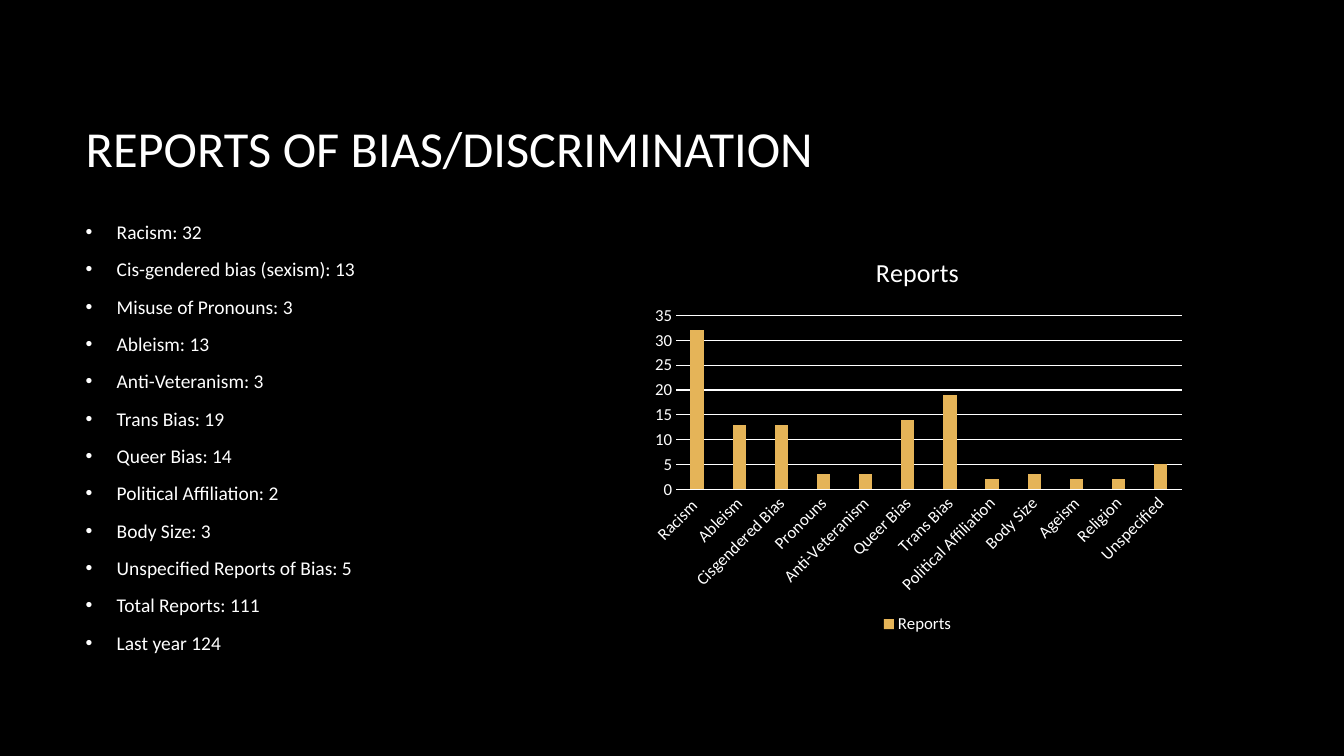
from dataclasses import dataclass

from lxml import etree
from pptx import Presentation
from pptx.chart.data import CategoryChartData
from pptx.dml.color import RGBColor
from pptx.enum.chart import XL_CHART_TYPE, XL_LEGEND_POSITION, XL_TICK_MARK
from pptx.enum.text import MSO_ANCHOR, MSO_AUTO_SIZE, PP_ALIGN
from pptx.oxml.ns import qn
from pptx.util import Inches, Pt

COLUMN = XL_CHART_TYPE.COLUMN_CLUSTERED
BOTTOM = XL_LEGEND_POSITION.BOTTOM
NO_TICK = XL_TICK_MARK.NONE
MIDDLE = MSO_ANCHOR.MIDDLE
NO_FIT = MSO_AUTO_SIZE.NONE
LEFT = PP_ALIGN.LEFT


@dataclass(frozen=True)
class Theme:
    face: str = "Calibri"
    back: RGBColor = RGBColor(0, 0, 0)
    ink: RGBColor = RGBColor(255, 255, 255)
    gold: RGBColor = RGBColor(0xE5, 0xB4, 0x58)
    title: float = 36
    body: float = 13.9
    head: float = 18.6
    label: float = 12
    base: float = 10
    rule: float = 0.75


class Page:
    def __init__(self, slide, theme):
        self.slide = slide
        self.theme = theme
        fill = slide.background.fill
        fill.solid()
        fill.fore_color.rgb = theme.back

    def style(self, font, size):
        font.name = self.theme.face
        font.size = Pt(size)
        font.bold = False
        font.color.rgb = self.theme.ink

    def rule(self, line):
        line.color.rgb = self.theme.ink
        line.width = Pt(self.theme.rule)

    def place(self, shape, box):
        shape.left, shape.top, shape.width, shape.height = map(Inches, box)

    def frame(self, shape):
        frame = shape.text_frame
        frame.word_wrap = True
        frame.auto_size = NO_FIT
        frame.vertical_anchor = MIDDLE
        return frame

    def title(self, text, box):
        shape = self.slide.shapes.title
        self.place(shape, box)
        frame = self.frame(shape)
        frame.text = text
        para = frame.paragraphs[0]
        para.alignment = LEFT
        self.style(para.font, self.theme.title)

    def bullets(self, items, box):
        shape = self.slide.shapes.add_textbox(*map(Inches, box))
        frame = self.frame(shape)
        frame.text = "\n".join(items)
        for para in frame.paragraphs:
            para.space_after = Pt(10)
            props = para._p.get_or_add_pPr()
            props.set("marL", str(Inches(0.31)))
            props.set("indent", str(Inches(-0.31)))
            font = etree.SubElement(props, qn("a:buFont"))
            font.set("typeface", "Arial")
            mark = etree.SubElement(props, qn("a:buChar"))
            mark.set("char", "•")
            self.style(para.font, self.theme.body)

    def axis(self, axis):
        axis.major_tick_mark = NO_TICK
        axis.minor_tick_mark = NO_TICK
        self.style(axis.tick_labels.font, self.theme.label)

    def columns(self, name, counts, box):
        data = CategoryChartData()
        data.categories = list(counts)
        data.add_series(name, list(counts.values()))
        holder = self.slide.shapes.add_chart(COLUMN, *map(Inches, box), data)
        chart = holder.chart
        self.style(chart.font, self.theme.base)

        chart.has_title = True
        head = chart.chart_title.text_frame
        head.text = name
        self.style(head.paragraphs[0].font, self.theme.head)

        chart.has_legend = True
        chart.legend.position = BOTTOM
        chart.legend.include_in_layout = False
        self.style(chart.legend.font, self.theme.label)

        names, values = chart.category_axis, chart.value_axis
        self.axis(names)
        self.axis(values)
        self.rule(names.format.line)
        names._element.txPr.find(qn("a:bodyPr")).set("rot", "-2700000")
        values.format.line.fill.background()
        values.has_major_gridlines = True
        self.rule(values.major_gridlines.format.line)

        plot = chart.plots[0]
        plot.vary_by_categories = False
        plot.gap_width = 219
        plot.overlap = -27
        fill = plot.series[0].format.fill
        fill.solid()
        fill.fore_color.rgb = self.theme.gold


def main():
    deck = Presentation()
    deck.slide_width, deck.slide_height = Inches(13.33), Inches(7.5)
    page = Page(deck.slides.add_slide(deck.slide_layouts[5]), Theme())
    page.title("REPORTS OF BIAS/DISCRIMINATION", (0.75, 0.67, 11.08, 1.59))
    page.bullets([
        "Racism: 32",
        "Cis-gendered bias (sexism): 13",
        "Misuse of Pronouns: 3",
        "Ableism: 13",
        "Anti-Veteranism: 3",
        "Trans Bias: 19",
        "Queer Bias: 14",
        "Political Affiliation: 2",
        "Body Size: 3",
        "Unspecified Reports of Bias: 5",
        "Total Reports: 111",
        "Last year 124",
    ], (0.75, 2.34, 5.46, 3.99))
    page.columns("Reports", {
        "Racism ": 32,
        "Ableism": 13,
        "Cisgendered Bias": 13,
        "Pronouns": 3,
        "Anti-Veteranism": 3,
        "Queer Bias": 14,
        "Trans Bias": 19,
        "Political Affiliation": 2,
        "Body Size": 3,
        "Ageism": 2,
        "Religion": 2,
        "Unspecified": 5,
    }, (6.37, 2.34, 5.46, 3.99))
    deck.save("out.pptx")


if __name__ == "__main__":
    main()
